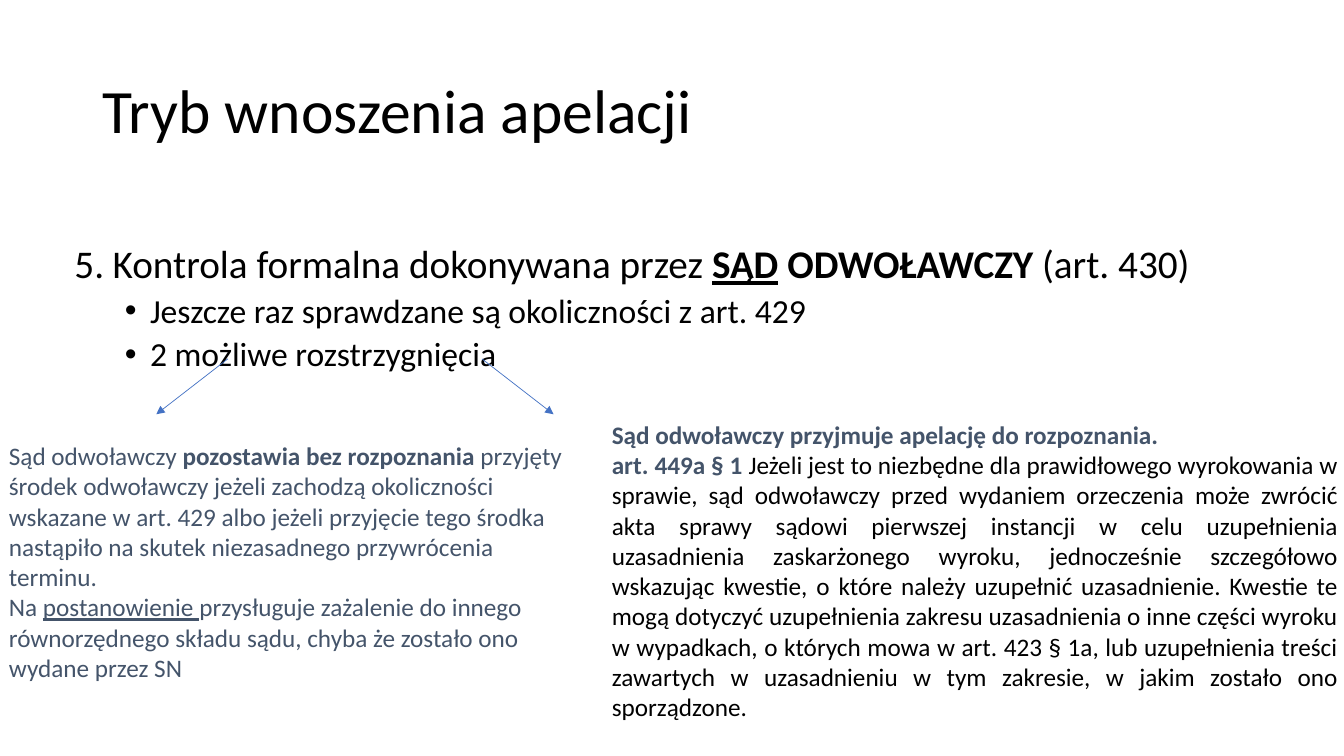
from lxml import etree
from pptx import Presentation
from pptx.dml.color import RGBColor
from pptx.enum.shapes import MSO_CONNECTOR
from pptx.enum.text import MSO_ANCHOR, PP_ALIGN
from pptx.oxml.ns import qn
from pptx.util import Emu, Pt

BLACK = RGBColor(0x00, 0x00, 0x00)
SLATE = RGBColor(0x44, 0x54, 0x6A)
BLUE = RGBColor(0x44, 0x72, 0xC4)
TOP, MIDDLE = MSO_ANCHOR.TOP, MSO_ANCHOR.MIDDLE
LEFT, JUSTIFY = PP_ALIGN.LEFT, PP_ALIGN.JUSTIFY
STRAIGHT = MSO_CONNECTOR.STRAIGHT
SCALE = 9144  # EMU in one px, 100 px to the inch


def px(n):
    return Emu(n * SCALE)


class Deck:
    font = "Calibri"

    def __init__(self, width, height):
        self.prs = Presentation()
        self.prs.slide_width, self.prs.slide_height = px(width), px(height)
        self.slide = self.prs.slides.add_slide(self.prs.slide_layouts[6])

    def box(self, x, y, w, h, anchor=TOP):
        shape = self.slide.shapes.add_textbox(px(x), px(y), px(w), px(h))
        frame = shape.text_frame
        frame.word_wrap = True
        frame.vertical_anchor = anchor
        return frame

    def para(self, frame, runs, size, color=BLACK, align=LEFT, line=1.0,
             before=0, bullet=None, margin=0, hang=0):
        """Each run is (text, marks, color); marks hold b for bold, u for underline."""
        first = frame.paragraphs[0]
        para = frame.add_paragraph() if first.runs else first
        para.alignment = align
        para.line_spacing = line
        para.space_before = Pt(before)
        if bullet:
            self.mark(para, bullet, margin, hang)
        for text, marks, *tint in runs:
            run = para.add_run()
            run.text = text
            font = run.font
            font.name, font.size = self.font, Pt(size)
            font.bold, font.underline = "b" in marks, "u" in marks
            font.color.rgb = tint[0] if tint else color

    def mark(self, para, bullet, margin, hang):
        props = para._p.get_or_add_pPr()
        props.set("marL", str(px(margin)))
        props.set("indent", str(px(-hang)))
        if isinstance(bullet, int):
            etree.SubElement(props, qn("a:buFont"), typeface=self.font)
            etree.SubElement(props, qn("a:buAutoNum"), type="arabicPeriod",
                             startAt=str(bullet))
        else:
            etree.SubElement(props, qn("a:buFont"), typeface="Arial")
            etree.SubElement(props, qn("a:buChar"), char=bullet)

    def arrow(self, x1, y1, x2, y2):
        link = self.slide.shapes.add_connector(STRAIGHT, px(x1), px(y1), px(x2), px(y2))
        link.line.color.rgb = BLUE
        link.line.width = Pt(0.5)
        etree.SubElement(link.line._get_or_add_ln(), qn("a:tailEnd"), type="triangle")
        etree.SubElement(link._element.spPr, qn("a:effectLst"))

    def save(self):
        self.prs.save("out.pptx")


def main():
    deck = Deck(1333, 750)

    # Title
    title = deck.box(92, 40, 1150, 145, MIDDLE)
    deck.para(title, [("Tryb wnoszenia apelacji", "")], 44, line=0.9)

    # Numbered step and its points
    body = deck.box(64, 238, 1206, 491)
    deck.para(body, [("Kontrola formalna dokonywana przez ", ""), ("SĄD", "bu"),
                     (" ODWOŁAWCZY ", "b"), ("(art. 430)", "")],
              28, line=0.9, bullet=5, margin=38, hang=38)
    for point in ("Jeszcze raz sprawdzane są okoliczności z art. 429",
                  "2 możliwe rozstrzygnięcia"):
        deck.para(body, [(point, "")], 24, line=0.9, before=5,
                  bullet="•", margin=75, hang=25)

    # Arrows to the two outcomes
    for start, end in ((226, 155), (478, 549)):
        deck.arrow(start, 356, end, 411)

    # Left outcome: appeal left unheard
    left = deck.box(-1, 432, 573, 252)
    deck.para(left, [
        ("Sąd odwoławczy ", ""), ("pozostawia bez rozpoznania ", "b"),
        ("przyjęty środek odwoławczy jeżeli zachodzą okoliczności wskazane w art. 429 "
         "albo jeżeli przyjęcie tego środka nastąpiło na skutek niezasadnego "
         "przywrócenia terminu.", "")], 18, SLATE)
    deck.para(left, [
        ("Na ", ""), ("postanowienie ", "u"),
        ("przysługuje zażalenie do innego równorzędnego składu sądu, chyba że "
         "zostało ono wydane przez SN", "")], 18, SLATE)

    # Right outcome: appeal accepted
    right = deck.box(597, 411, 740, 313)
    deck.para(right, [("Sąd odwoławczy przyjmuje apelację do rozpoznania.", "b")], 18, SLATE)
    deck.para(right, [
        ("art. 449a § 1 ", "b"),
        ("Jeżeli jest to niezbędne dla prawidłowego wyrokowania w sprawie, sąd "
         "odwoławczy przed wydaniem orzeczenia może zwrócić akta sprawy sądowi "
         "pierwszej instancji w celu uzupełnienia uzasadnienia zaskarżonego wyroku, "
         "jednocześnie szczegółowo wskazując kwestie, o które należy uzupełnić "
         "uzasadnienie. Kwestie te mogą dotyczyć uzupełnienia zakresu uzasadnienia "
         "o inne części wyroku w wypadkach, o których mowa w art. 423 § 1a, lub "
         "uzupełnienia treści zawartych w uzasadnieniu w tym zakresie, w jakim "
         "zostało ono sporządzone.", "", BLACK)], 18, SLATE, JUSTIFY)

    deck.save()


if __name__ == "__main__":
    main()
